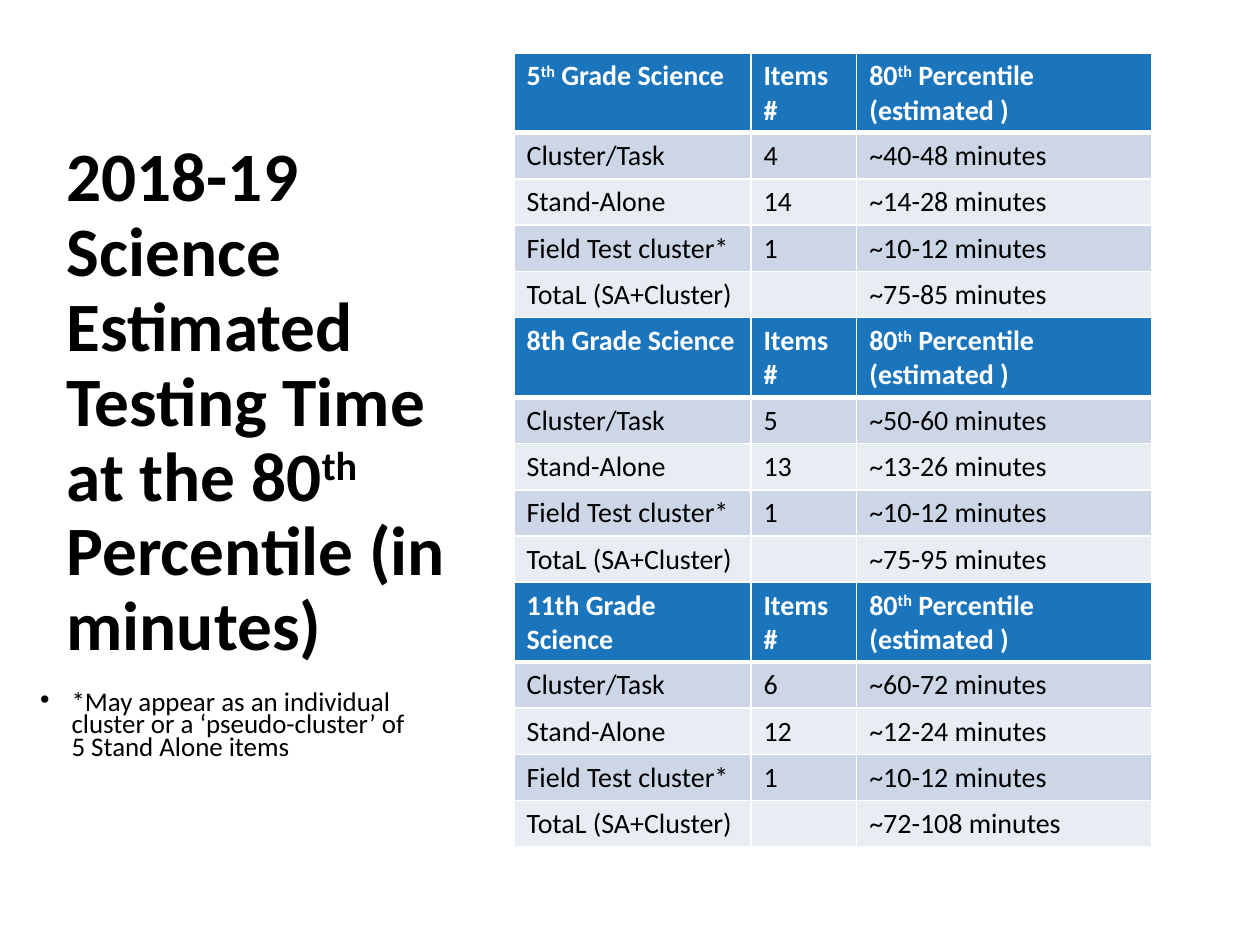
from lxml import etree
from pptx import Presentation
from pptx.dml.color import RGBColor
from pptx.enum.text import MSO_ANCHOR
from pptx.oxml.ns import qn
from pptx.util import Inches, Pt

MIDDLE = MSO_ANCHOR.MIDDLE
FONT = "Calibri"
BLACK, WHITE, HEADER_BLUE = "000000", "FFFFFF", "1B75BC"
BANDS = ["E8ECF3", "CDD6E7"]


def rgb(hex_color):
    return RGBColor.from_string(hex_color)


def add_runs(paragraph, text, size, color, bold=False):
    """Add text run by run; every second part between ^ marks is superscript."""
    for i, part in enumerate(text.split("^")):
        run = paragraph.add_run()
        run.text = part
        run.font.name = FONT
        run.font.size = Pt(size)
        run.font.bold = bold
        run.font.color.rgb = rgb(color)
        if i % 2:
            run._r.get_or_add_rPr().set("baseline", "30000")


prs = Presentation()
prs.slide_width, prs.slide_height = Inches(10), Inches(7.5)
slide = prs.slides.add_slide(prs.slide_layouts[6])

# Title
title = slide.shapes.add_textbox(Inches(0.43), Inches(1.64), Inches(3.23), Inches(3.13)).text_frame
title.word_wrap = True
title.vertical_anchor = MIDDLE
title.paragraphs[0].line_spacing = 0.9
add_runs(title.paragraphs[0],
         "2018-19 Science Estimated Testing Time at the 80^th^ Percentile (in minutes)",
         39.6, BLACK, True)

# Bulleted footnote
footnote = slide.shapes.add_textbox(Inches(0.22), Inches(5.45), Inches(3.23), Inches(0.78)).text_frame
footnote.word_wrap = True
note = footnote.paragraphs[0]
note.line_spacing = 0.7
note_props = note._p.get_or_add_pPr()
note_props.set("marL", str(Inches(0.25)))
note_props.set("indent", str(Inches(-0.25)))
etree.SubElement(note_props, qn("a:buFont"), typeface="Arial")
etree.SubElement(note_props, qn("a:buChar"), char="•")
add_runs(note, "*May appear as an individual cluster or a ‘pseudo-cluster’ of 5 Stand Alone items",
         15.4, BLACK)

# Grade tables: heading, item counts, estimated minutes
grades = [
    ("5^th^ Grade Science", ["4", "14", "1", ""], ["40-48", "14-28", "10-12", "75-85"]),
    ("8th Grade Science", ["5", "13", "1", ""], ["50-60", "13-26", "10-12", "75-95"]),
    ("11th Grade Science", ["6", "12", "1", ""], ["60-72", "12-24", "10-12", "72-108"]),
]
item_types = ["Cluster/Task", "Stand-Alone", "Field Test cluster*", "TotaL (SA+Cluster)"]
column_widths = [1.88, 0.84, 2.34]
row_heights = [0.59] + [0.34] * 4

for n, (grade, counts, minutes) in enumerate(grades):
    rows = [(grade, "Items #", "80^th^ Percentile (estimated )")]
    rows += [(kind, count, f"~{time} minutes")
             for kind, count, time in zip(item_types, counts, minutes)]
    times = slide.shapes.add_table(len(rows), 3, Inches(4.08), Inches(0.42 + 2.1 * n),
                                   Inches(5.06), Inches(2.1)).table
    for column, width in zip(times.columns, column_widths):
        column.width = Inches(width)
    for row, height in zip(times.rows, row_heights):
        row.height = Inches(height)

    for r, row in enumerate(rows):
        for c, text in enumerate(row):
            cell = times.cell(r, c)
            # White borders, thicker below the header
            thick_side = {0: "lnB", 1: "lnT"}.get(r)
            for side in ("lnL", "lnR", "lnT", "lnB"):
                border = etree.SubElement(cell._tc.get_or_add_tcPr(), qn(f"a:{side}"),
                                          w=str(Pt(3 if side == thick_side else 1)))
                line_fill = etree.SubElement(border, qn("a:solidFill"))
                etree.SubElement(line_fill, qn("a:srgbClr"), val=WHITE)
            cell.fill.solid()
            cell.fill.fore_color.rgb = rgb(BANDS[r % 2] if r else HEADER_BLUE)
            paragraph = cell.text_frame.paragraphs[0]
            if text:
                add_runs(paragraph, text, 16, BLACK if r else WHITE, r == 0)
            else:
                # An empty cell keeps the text size of its row
                etree.SubElement(paragraph._p, qn("a:endParaRPr"), sz="1600")

prs.save("out.pptx")
